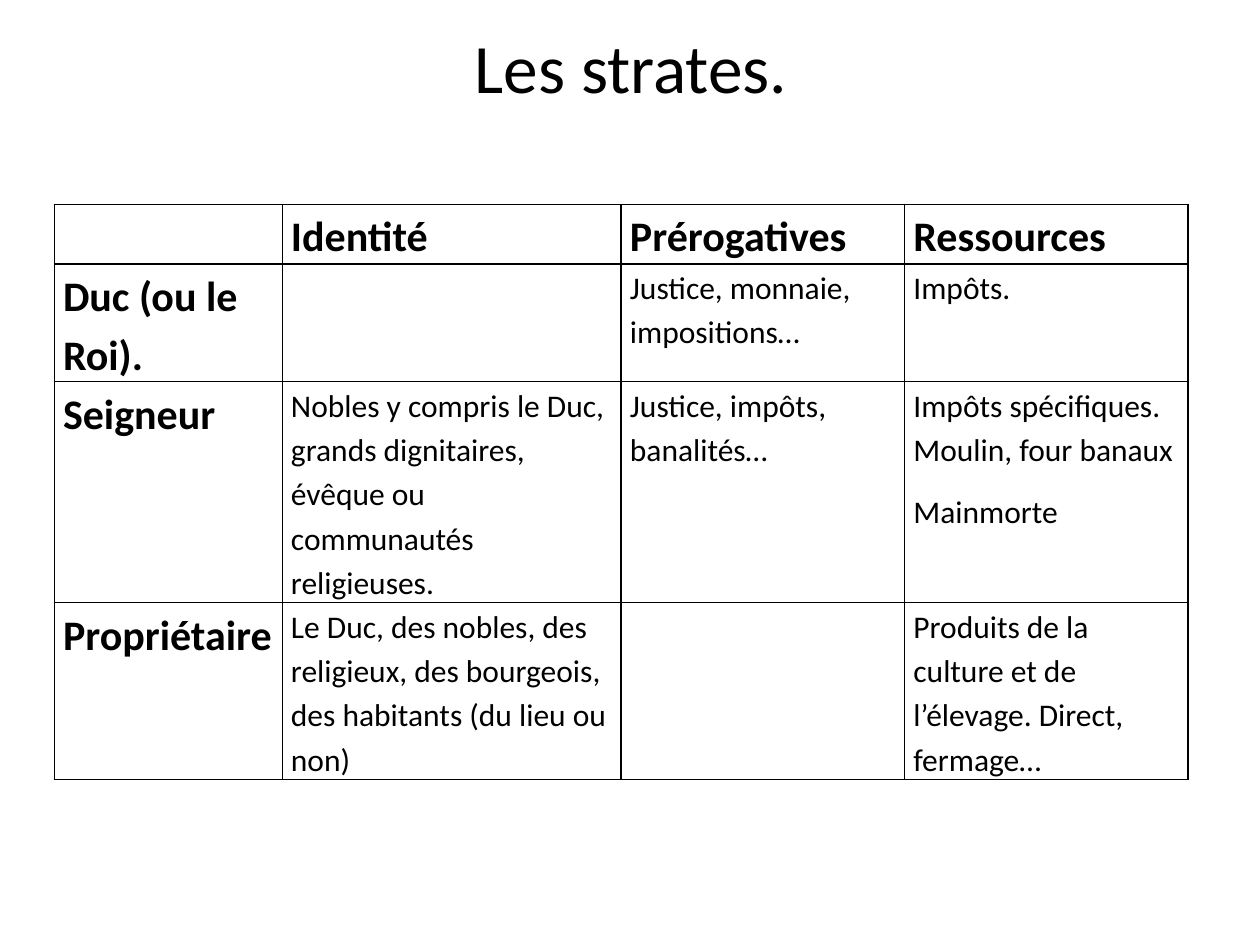
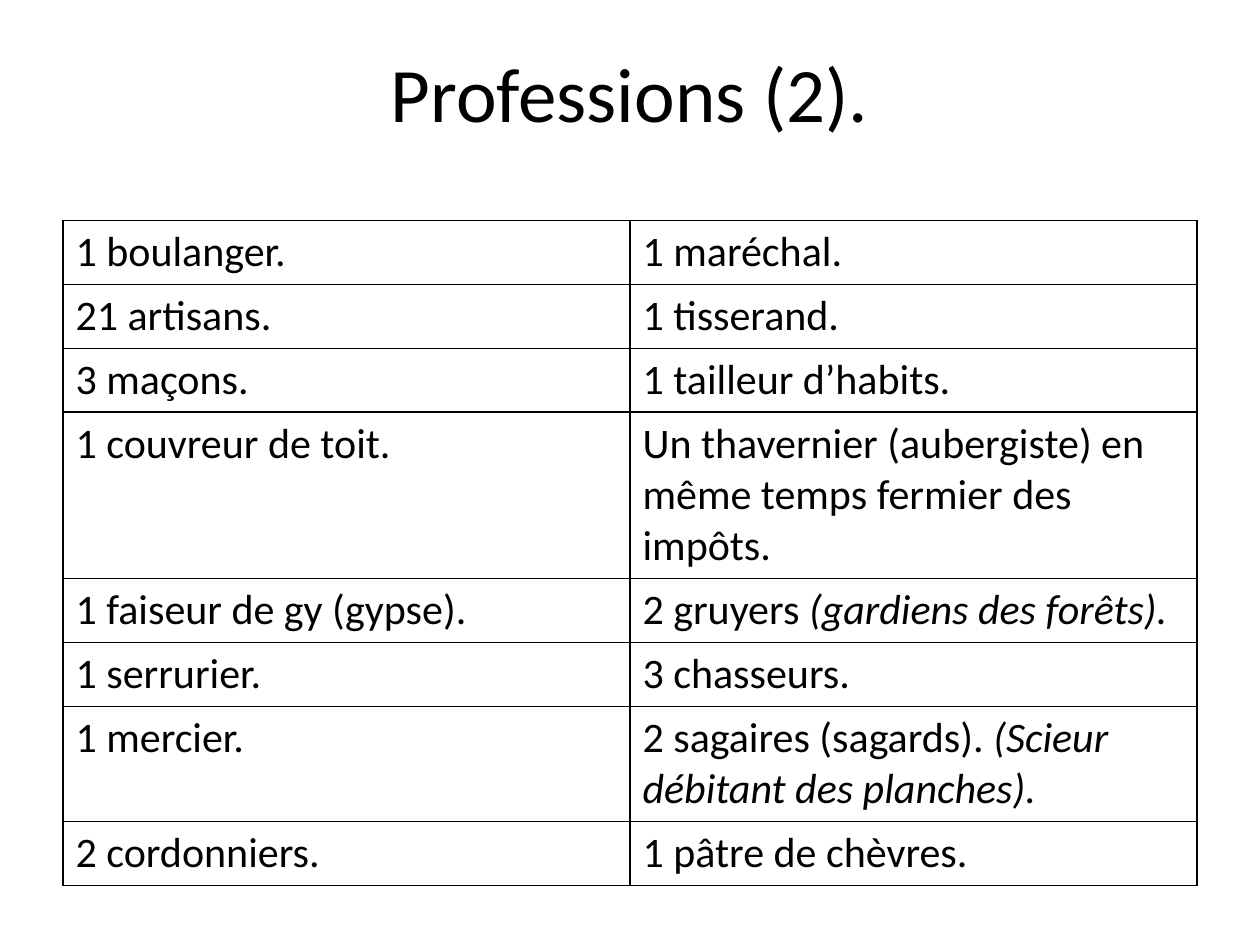
from dataclasses import dataclass
from itertools import product

from lxml.etree import SubElement
from pptx import Presentation
from pptx.dml.color import RGBColor
from pptx.enum.text import MSO_ANCHOR, MSO_AUTO_SIZE, PP_ALIGN
from pptx.oxml.ns import qn
from pptx.util import Pt

COLORS = {"ink": "000000", "paper": "FFFFFF"}
INK = RGBColor.from_string(COLORS["ink"])
WIDTH = 648
HEAD = {"size": Pt(24), "bold": True}
BODY = {"size": Pt(18), "bold": False}
PLAIN = {"size": Pt(24), "bold": False}
TIGHT = {"margin_left": Pt(5), "margin_right": Pt(5),
         "margin_top": Pt(0), "margin_bottom": Pt(0)}
LOOSE = {"line_spacing": 1.15, "space_after": Pt(10)}


@dataclass
class Title:
    text: str
    left: float
    top: float
    height: float
    size: float


@dataclass
class Grid:
    left: float
    top: float
    cols: list[float]
    rows: list[float]
    texts: list[list[str]]
    heads: bool
    cell: dict
    para: dict


@dataclass
class Page:
    title: Title
    grid: Grid


STRATA = [
    ["", "Identité", "Prérogatives", "Ressources"],
    ["Duc (ou le Roi).", "", "Justice, monnaie, impositions…", "Impôts."],
    ["Seigneur",
     "Nobles y compris le Duc, grands dignitaires, évêque ou communautés religieuses.",
     "Justice, impôts, banalités…",
     "Impôts spécifiques. Moulin, four banaux\nMainmorte"],
    ["Propriétaire",
     "Le Duc, des nobles, des religieux, des bourgeois, des habitants (du lieu ou non)",
     "",
     "Produits de la culture et de l’élevage. Direct, fermage…"],
]
# Underscores enclose italic words.
TRADES = [
    ["1 boulanger.", "1 maréchal."],
    ["21 artisans.", "1 tisserand."],
    ["3 maçons.", "1 tailleur d’habits."],
    ["1 couvreur de toit.",
     "Un thavernier (aubergiste) en même temps fermier des impôts."],
    ["1 faiseur de gy (gypse).", "2 gruyers _(gardiens des forêts)._"],
    ["1 serrurier.", "3 chasseurs."],
    ["1 mercier.", "2 sagaires (sagards). _(Scieur débitant des planches)._"],
    ["2 cordonniers.", "1 pâtre de chèvres."],
]
PAGES = [
    Page(Title("Les strates.", 36.7, 15, 45.4, 39.6),
         Grid(31, 116.8, [130.3, 193.7, 162, 162], [34, 50, 104, 87],
              STRATA, True, TIGHT, LOOSE)),
    Page(Title("Professions (2).", 36, 21.6, 61.2, 44),
         Grid(36, 126, [WIDTH / 2] * 2, [29.5] * len(TRADES),
              TRADES, False, {}, {})),
]


def apply(target: object, values: dict) -> None:
    for name, value in values.items():
        setattr(target, name, value)


def style(font, values: dict) -> None:
    apply(font, {"name": "Calibri", **values})
    font.color.rgb = INK


def border(cell) -> None:
    props = cell._tc.get_or_add_tcPr()
    for side in ("lnL", "lnR", "lnT", "lnB"):
        line = SubElement(props, qn(f"a:{side}"), w=str(Pt(1)))
        fill = SubElement(line, qn("a:solidFill"))
        SubElement(fill, qn("a:srgbClr"), val=COLORS["ink"])


def write(cell, text: str, para: dict, font: dict) -> None:
    frame = cell.text_frame
    for num, line in enumerate(text.split("\n")):
        item = frame.add_paragraph() if num else frame.paragraphs[0]
        apply(item, para)
        for turn, part in enumerate(line.split("_")):
            if part:
                run = item.add_run()
                run.text = part
                style(run.font, {**font, "italic": turn % 2 == 1})


def add_title(slide, title: Title) -> None:
    shape = slide.shapes.title
    apply(shape, {"left": Pt(title.left), "top": Pt(title.top),
                  "width": Pt(WIDTH), "height": Pt(title.height)})
    frame = shape.text_frame
    frame.text = title.text
    apply(frame, {"word_wrap": True, "auto_size": MSO_AUTO_SIZE.NONE,
                  "vertical_anchor": MSO_ANCHOR.MIDDLE})
    item = frame.paragraphs[0]
    item.alignment = PP_ALIGN.CENTER
    style(item.runs[0].font, {"size": Pt(title.size)})


def add_grid(slide, grid: Grid) -> None:
    rows, cols = len(grid.rows), len(grid.cols)
    table = slide.shapes.add_table(
        rows, cols, Pt(grid.left), Pt(grid.top),
        Pt(WIDTH), Pt(sum(grid.rows))).table
    apply(table, {"first_row": False, "horz_banding": False})
    for col, width in zip(table.columns, grid.cols):
        col.width = Pt(width)
    for row, height in zip(table.rows, grid.rows):
        row.height = Pt(height)
    for row, col in product(range(rows), range(cols)):
        cell = table.cell(row, col)
        border(cell)
        cell.fill.background()
        text = grid.texts[row][col]
        if text:
            apply(cell, grid.cell)
            edge = HEAD if row == 0 or col == 0 else BODY
            write(cell, text, grid.para, edge if grid.heads else PLAIN)


def main() -> None:
    deck = Presentation()
    apply(deck, {"slide_width": Pt(720), "slide_height": Pt(540)})
    back = deck.slide_master.background.fill
    back.solid()
    back.fore_color.rgb = RGBColor.from_string(COLORS["paper"])
    for page in PAGES:
        slide = deck.slides.add_slide(deck.slide_layouts[5])
        add_title(slide, page.title)
        add_grid(slide, page.grid)
    deck.save("out.pptx")


if __name__ == "__main__":
    main()
